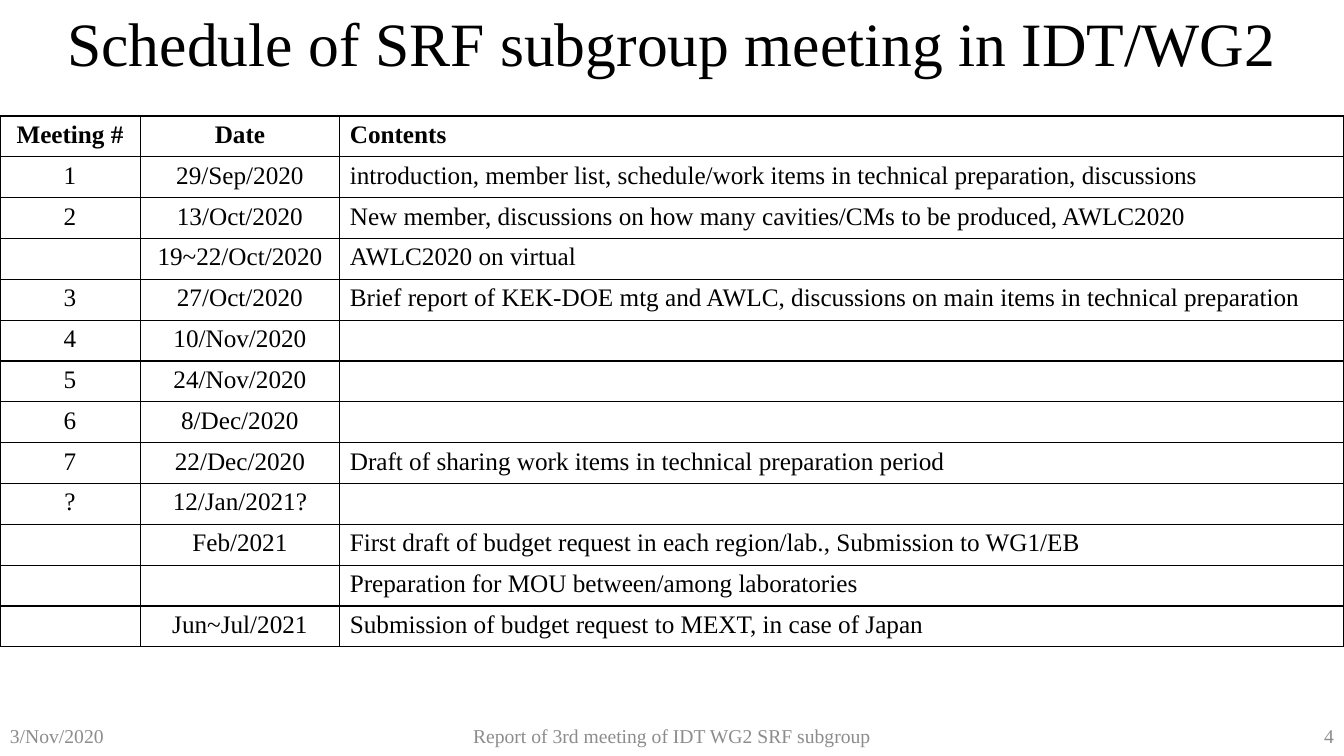
from lxml.etree import SubElement
from pptx import Presentation
from pptx.dml.color import RGBColor
from pptx.enum.text import MSO_ANCHOR, MSO_AUTO_SIZE, PP_ALIGN
from pptx.oxml.ns import qn
from pptx.util import Inches, Pt

MEETINGS = [
    ("Meeting #", "Date", "Contents"),
    ("1", "29/Sep/2020", "introduction, member list, schedule/work items in technical preparation, discussions"),
    ("2", "13/Oct/2020", "New member, discussions on how many cavities/CMs to be produced, AWLC2020"),
    ("", "19~22/Oct/2020", "AWLC2020 on virtual"),
    ("3", "27/Oct/2020", "Brief report of KEK-DOE mtg and AWLC, discussions on main items in technical preparation"),
    ("4", "10/Nov/2020", ""),
    ("5", "24/Nov/2020", ""),
    ("6", "8/Dec/2020", ""),
    ("7", "22/Dec/2020", "Draft of sharing work items in technical preparation period"),
    ("?", "12/Jan/2021?", ""),
    ("", "Feb/2021", "First draft of budget request in each region/lab., Submission to WG1/EB"),
    ("", "", "Preparation for MOU between/among laboratories"),
    ("", "Jun~Jul/2021", "Submission of budget request to MEXT, in case of Japan"),
]


def color(value):
    """Turn a hex string into a colour."""
    return RGBColor.from_string(value)


class ScheduleSlide:
    """Hold the slide and its style; lengths are inches on a 13.33 by 7.5 slide."""

    font_name = "Times New Roman"
    ink = "000000"
    muted = "8C8C8C"
    width, height = 13.33, 7.5

    def __init__(self, presentation):
        """Size the presentation and add a title-only slide."""
        presentation.slide_width = Inches(self.width)
        presentation.slide_height = Inches(self.height)
        self.slide = presentation.slides.add_slide(presentation.slide_layouts[5])

    def set_text(self, frame, text, size, ink, align, bold=False):
        """Put one styled paragraph in a text frame."""
        paragraph = frame.paragraphs[0]
        paragraph.text = text
        paragraph.alignment = align
        font = paragraph.font
        font.name, font.size, font.bold = self.font_name, Pt(size), bold
        font.color.rgb = color(ink)

    def title(self, text, height):
        """Stretch the title placeholder over the top of the slide."""
        shape = self.slide.shapes.title
        shape.left, shape.top = 0, 0
        shape.width, shape.height = Inches(self.width), Inches(height)
        frame = shape.text_frame
        frame.auto_size = MSO_AUTO_SIZE.NONE
        frame.vertical_anchor = MSO_ANCHOR.MIDDLE
        self.set_text(frame, text, 44, self.ink, PP_ALIGN.CENTER)

    def footer(self, text, left, width, align):
        """Add a muted text in the bottom row."""
        row = 0.4
        shape = self.slide.shapes.add_textbox(
            Inches(left), Inches(self.height - row), Inches(width), Inches(row))
        frame = shape.text_frame
        frame.word_wrap = True
        frame.vertical_anchor = MSO_ANCHOR.MIDDLE
        self.set_text(frame, text, 14, self.muted, align)

    def border(self, cell):
        """Draw a one-point line on all four sides of a cell."""
        properties = cell._tc.get_or_add_tcPr()
        for side in ("a:lnL", "a:lnR", "a:lnT", "a:lnB"):
            line = SubElement(properties, qn(side), w=str(Pt(1)))
            fill = SubElement(line, qn("a:solidFill"))
            SubElement(fill, qn("a:srgbClr"), val=self.ink)

    def table(self, rows, top, height, first_columns):
        """Add a full-width ruled table whose last column takes the rest."""
        widths = [*first_columns, self.width - sum(first_columns)]
        table = self.slide.shapes.add_table(
            len(rows), len(widths), 0, Inches(top), Inches(self.width), Inches(height)).table
        table.first_row = table.horz_banding = False
        for column, width in zip(table.columns, widths):
            column.width = Inches(width)
        for row_index, row in enumerate(rows):
            for column_index, text in enumerate(row):
                cell = table.cell(row_index, column_index)
                align = PP_ALIGN.LEFT if column_index == 2 else PP_ALIGN.CENTER
                self.set_text(cell.text_frame, text, 18, self.ink, align, row_index == 0)
                self.border(cell)
                cell.fill.background()


def main():
    """Build and save the meeting schedule."""
    presentation = Presentation()
    schedule = ScheduleSlide(presentation)
    side = 3
    schedule.footer("3/Nov/2020", 0, side, PP_ALIGN.LEFT)
    schedule.footer("Report of 3rd meeting of IDT WG2 SRF subgroup", 0, schedule.width, PP_ALIGN.CENTER)
    schedule.footer("4", schedule.width - side, side, PP_ALIGN.RIGHT)
    schedule.table(MEETINGS, 1.15, 5.27, (1.39, 1.98))
    schedule.title("Schedule of SRF subgroup meeting in IDT/WG2", 0.84)
    presentation.save("out.pptx")


if __name__ == "__main__":
    main()
